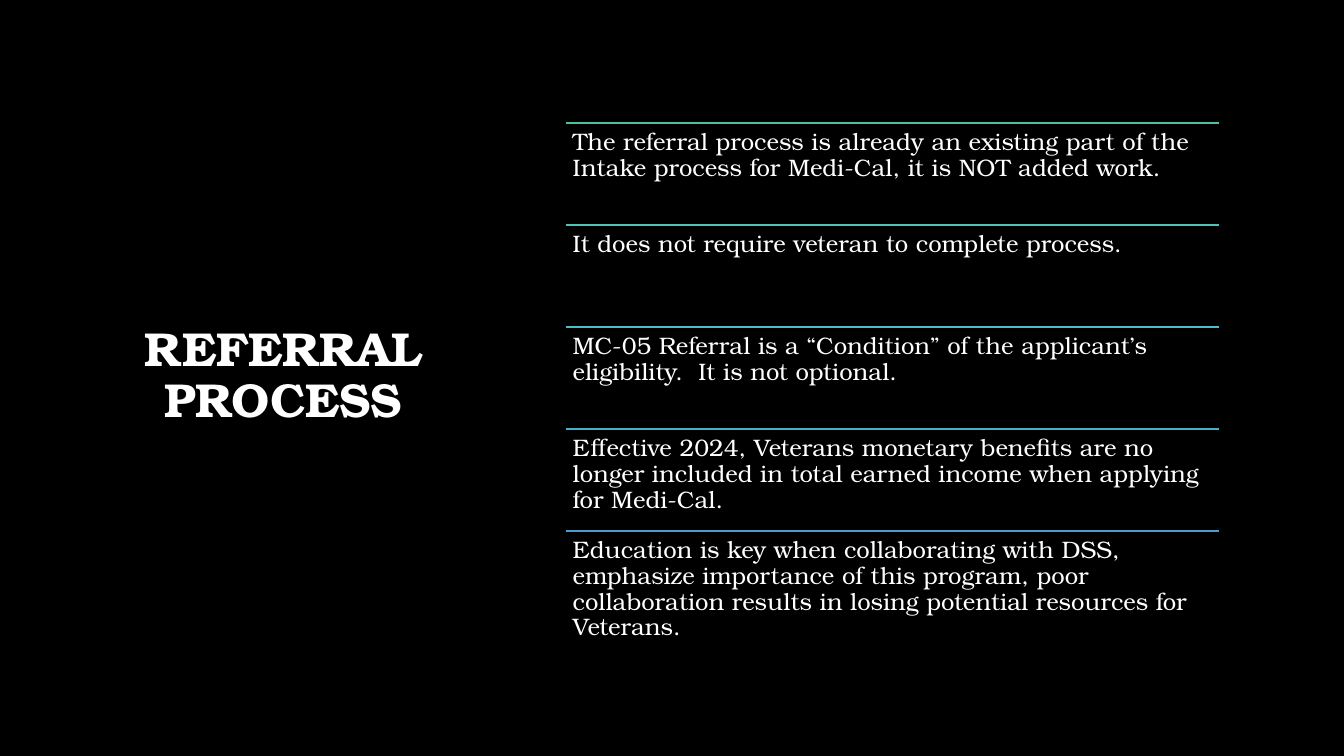
from pptx import Presentation
from pptx.dml.color import RGBColor as RGB
from pptx.enum.shapes import MSO_CONNECTOR as CONN
from pptx.enum.text import MSO_ANCHOR as ANCHOR, PP_ALIGN as ALIGN
from pptx.oxml.ns import qn
from pptx.util import Inches, Pt
from lxml import etree

THEME = {
    "font": "TeX Gyre Bonum",
    "bg": RGB.from_string("000000"),
    "text": RGB.from_string("FFFFFF"),
    "rules": ["50BEA3", "4EC2B7", "4DBEC5", "4BAEC9", "4A9CCC"],
    "title": Pt(34),
    "body": Pt(17),
    "rule": Pt(1),
}
POINTS = [
    "The referral process is already an existing part of the Intake process for Medi-Cal, it is NOT added work.",
    "It does not require veteran to complete process.",
    "MC-05 Referral is a “Condition” of the applicant’s eligibility.  It is not optional.",
    "Effective 2024, Veterans monetary benefits are no longer included in total earned income when applying for Medi-Cal.",
    "Education is key when collaborating with DSS, emphasize importance of this program, poor collaboration results in losing potential resources for Veterans.",
]
LEFT, TOP, WIDTH = Inches(5.61), Inches(1.22), Inches(6.48)
ROW = Inches(4.05) // 4


def add_text(s, box, text, size, bold, align, anchor, inset):
    sp = s.shapes.add_textbox(*box)
    tf = sp.text_frame
    frame = {"word_wrap": True, "vertical_anchor": anchor}
    frame.update({f"margin_{side}": inset for side in ("left", "top", "right", "bottom")})
    for key, value in frame.items():
        setattr(tf, key, value)
    p = tf.paragraphs[0]
    p.alignment, p.line_spacing = align, 0.9
    r = p.add_run()
    r.text = text
    for key, value in {"name": THEME["font"], "size": size, "bold": bold}.items():
        setattr(r.font, key, value)
    r.font.color.rgb = THEME["text"]


prs = Presentation()
prs.slide_width, prs.slide_height = Inches(13.33), Inches(7.5)
s = prs.slides.add_slide(prs.slide_layouts[6])
s.background.fill.solid()
s.background.fill.fore_color.rgb = THEME["bg"]

title_box = [Inches(v) for v in (0.82, 0.67, 3.98, 6.13)]
add_text(s, title_box, "REFERRAL PROCESS", THEME["title"], True,
         ALIGN.CENTER, ANCHOR.MIDDLE, Inches(0.1))

for i, (point, color) in enumerate(zip(POINTS, THEME["rules"])):
    y = TOP + i * ROW
    rule = s.shapes.add_connector(CONN.STRAIGHT, LEFT, y, LEFT + WIDTH, y)
    rule.line.color.rgb = RGB.from_string(color)
    rule.line.width = THEME["rule"]
    etree.SubElement(rule._element.spPr, qn("a:effectLst"))
    add_text(s, (LEFT, y, WIDTH, ROW), point, THEME["body"], False,
             ALIGN.LEFT, ANCHOR.TOP, Inches(0.07))

prs.save("out.pptx")
